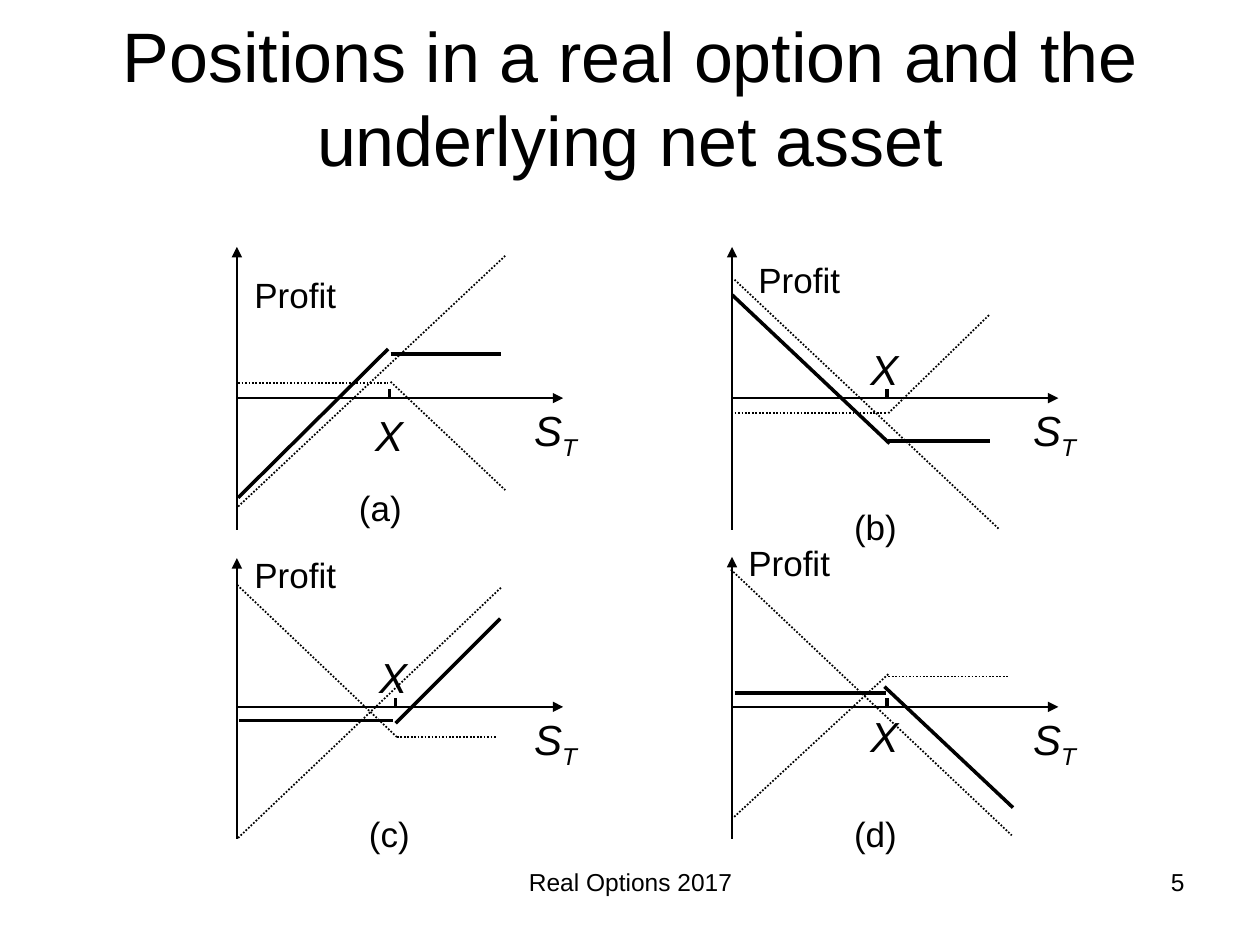
import pptx
import pptx.util
import pptx.dml.color
import pptx.enum.dml
import pptx.enum.shapes
import pptx.enum.text
import pptx.oxml
import pptx.oxml.ns

Inches, Pt = pptx.util.Inches, pptx.util.Pt
ALIGN = pptx.enum.text.PP_ALIGN
BLACK = pptx.dml.color.RGBColor(0, 0, 0)
FONT = "Arial"


def rule(ends, width, dotted=False, arrow=None):
    """Draw a straight line; arrow is headEnd (start) or tailEnd (finish)."""
    line = slide.shapes.add_connector(
        pptx.enum.shapes.MSO_CONNECTOR.STRAIGHT, *[Inches(v) for v in ends])
    line.line.color.rgb = BLACK
    line.line.width = Pt(width)
    if dotted:
        line.line.dash_style = pptx.enum.dml.MSO_LINE.ROUND_DOT
    props = line._element.spPr
    if arrow:
        tip = pptx.oxml.parse_xml(
            f'<a:{arrow} {pptx.oxml.ns.nsdecls("a")} type="triangle"/>')
        line.line._get_or_add_ln().append(tip)
    props.append(pptx.oxml.parse_xml(
        f'<a:effectLst {pptx.oxml.ns.nsdecls("a")}/>'))


def label(box, text, size, italic=False, sub="", align=ALIGN.LEFT):
    """Write text, with an optional subscript, in a box."""
    frame = slide.shapes.add_textbox(*[Inches(v) for v in box]).text_frame
    frame.word_wrap = True
    para = frame.paragraphs[0]
    para.alignment = align
    for part in filter(None, (text, sub)):
        run = para.add_run()
        run.text = part
        run.font.name, run.font.size = FONT, Pt(size)
        run.font.italic = italic
        run.font.color.rgb = BLACK
        if part == sub:
            run._r.get_or_add_rPr().set("baseline", "-25000")


deck = pptx.Presentation()
deck.slide_width, deck.slide_height = Inches(10), Inches(7.5)
slide = deck.slides.add_slide(deck.slide_layouts[5])

title = slide.shapes.title
title.left, title.top = Inches(0.75), Inches(0.14)
title.width, title.height = Inches(8.5), Inches(1.25)
title.text_frame.vertical_anchor = pptx.enum.text.MSO_ANCHOR.MIDDLE
para = title.text_frame.paragraphs[0]
para.alignment = ALIGN.CENTER
run = para.add_run()
run.text = "Positions in a real option and the underlying net asset"
run.font.name, run.font.size = FONT, Pt(40)
run.font.color.rgb = BLACK

label((3.42, 6.83, 3.17, 0.52), "Real Options 2017", 14, align=ALIGN.CENTER)
label((7.17, 6.83, 2.33, 0.52), "5", 14, align=ALIGN.RIGHT)

# Each panel: axis origin, axis top and foot, strike, S label left,
# boxes for Profit and X, caption corner, then solid and dotted lines
panels = [
    dict(name="(a)", x=1.88, y=3.16, top=1.96, foot=4.21, strike=3.09,
         asset=4.14, profit=(1.92, 2.12, 1.16), mark=(2.88, 3.2, 0.34),
         tag=(2.75, 3.81),
         solid=[(1.89, 3.95, 3.08, 2.77), (3.1, 2.81, 3.98, 2.81)],
         dots=[(1.89, 3.04, 3.08, 3.04), (3.1, 3.03, 4.01, 3.89),
               (4.01, 2.03, 1.88, 4.03)]),
    dict(name="(b)", x=5.81, y=3.16, top=1.96, foot=4.21, strike=7.04,
         asset=8.1, profit=(5.92, 2, 1.16), mark=(6.81, 2.68, 0.42),
         tag=(6.68, 3.96),
         solid=[(7.05, 3.5, 7.86, 3.5), (7.06, 3.52, 5.81, 2.34)],
         dots=[(5.83, 3.28, 7.03, 3.28), (7.05, 3.28, 7.85, 2.5),
               (5.83, 2.22, 7.93, 4.2)]),
    dict(name="(c)", x=1.88, y=5.61, top=4.43, foot=6.66, strike=3.14,
         asset=4.14, profit=(1.92, 4.34, 0.91), mark=(2.91, 5.12, 0.42),
         tag=(2.83, 6.4),
         solid=[(1.9, 5.72, 3.12, 5.72), (3.14, 5.74, 3.97, 4.91)],
         dots=[(3.15, 5.85, 1.88, 4.64), (3.15, 5.85, 3.94, 5.85),
               (1.89, 6.65, 3.98, 4.66)]),
    dict(name="(d)", x=5.81, y=5.61, top=4.42, foot=6.66, strike=7.04,
         asset=8.1, profit=(5.84, 4.25, 1.12), mark=(6.81, 5.59, 0.42),
         tag=(6.68, 6.4),
         solid=[(5.83, 5.5, 7.03, 5.5), (8.04, 6.41, 7.02, 5.45)],
         dots=[(5.8, 4.52, 8.03, 6.63), (7.05, 5.37, 8, 5.37),
               (7.05, 5.35, 5.82, 6.49)]),
]

for p in panels:
    x, y = p["x"], p["y"]
    rule((x, p["top"], x, p["foot"]), 1, arrow="headEnd")
    rule((x, y, x + 2.59, y), 1, arrow="tailEnd")
    label((*p["profit"], 0.43), "Profit", 20)
    label((p["asset"], y, 0.58, 0.5), "S", 24, italic=True, sub="T")
    label((*p["mark"], 0.5), "X", 24, italic=True)
    for ends in p["solid"]:
        rule(ends, 2)
    rule((p["strike"], y, p["strike"], y - 0.07), 2)
    for ends in p["dots"]:
        rule(ends, 1, dotted=True)
    label((*p["tag"], 0.59, 0.43), p["name"], 20)

deck.save("out.pptx")
